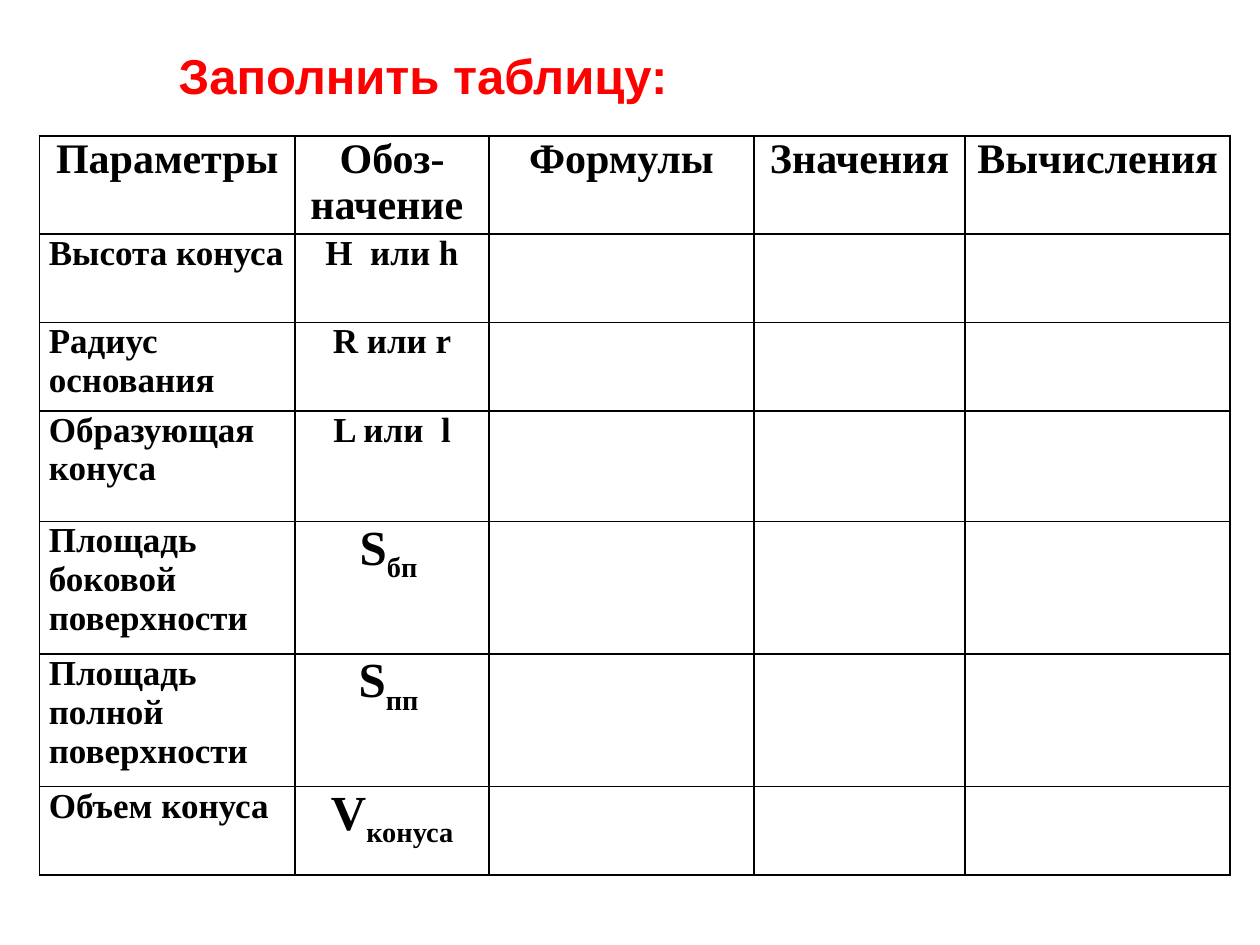
from lxml.etree import SubElement
from pptx import Presentation
from pptx.dml.color import RGBColor
from pptx.enum.text import MSO_AUTO_SIZE, PP_ALIGN as Align
from pptx.oxml.ns import qn
from pptx.util import Pt

BLACK = RGBColor(0, 0, 0)
RED = RGBColor(255, 0, 0)

HEADERS = ["Параметры", "Обоз-начение ", "Формулы", "Значения", "Вычисления"]
PARAMETERS = [
    ("Высота конуса", "H  или h", ""),
    ("Радиус основания", "R или r", ""),
    ("Образующая конуса", "L или  l", ""),
    ("Площадь боковой поверхности ", "S", "бп "),
    ("Площадь полной поверхности ", "S", "пп "),
    ("Объем конуса", "V", "конуса"),
]
COL_WIDTHS = [146.2, 110.7, 151.4, 120.8, 151.4]
ROW_HEIGHTS = [56.2, 50.5, 50.5, 63.2, 75.8, 75.8, 50.5]


def add_text(p, text, size=20, font="Times New Roman", color=BLACK,
             align=Align.CENTER, baseline=0):
    p.alignment = align
    r = p.add_run()
    r.text = text
    r.font.size = Pt(size)
    r.font.name = font
    r.font.bold = True
    r.font.color.rgb = color
    if baseline:
        r.font._element.set("baseline", str(baseline * 1000))


def format_cell(cell):
    cell.margin_left = cell.margin_right = Pt(5.4)
    cell.margin_top = cell.margin_bottom = 0
    tc_pr = cell._tc.get_or_add_tcPr()
    for side in ("lnL", "lnR", "lnT", "lnB"):
        line = SubElement(tc_pr, qn(f"a:{side}"), w=str(Pt(1)))
        fill = SubElement(line, qn("a:solidFill"))
        SubElement(fill, qn("a:srgbClr"), val=str(BLACK))
    cell.fill.background()


def add_title(s, left, top, width, height):
    tf = s.shapes.add_textbox(Pt(left), Pt(top), Pt(width), Pt(height)).text_frame
    tf.word_wrap = True
    tf.auto_size = MSO_AUTO_SIZE.SHAPE_TO_FIT_TEXT
    add_text(tf.paragraphs[0], "Заполнить таблицу:", size=28, font="Arial", color=RED)


def add_parameter_table(s, left, top, col_widths, row_heights):
    table = s.shapes.add_table(
        len(row_heights), len(col_widths), Pt(left), Pt(top),
        Pt(sum(col_widths)), Pt(sum(row_heights))).table
    table.first_row = table.horz_banding = False
    for col, width in zip(table.columns, col_widths):
        col.width = Pt(width)
    for row, height in zip(table.rows, row_heights):
        row.height = Pt(height)
    for cell in table.iter_cells():
        format_cell(cell)

    for i, header in enumerate(HEADERS):
        add_text(table.cell(0, i).text_frame.paragraphs[0], header, size=24)
    for i, (name, symbol, subscript) in enumerate(PARAMETERS, 1):
        add_text(table.cell(i, 0).text_frame.paragraphs[0], name, align=Align.JUSTIFY)
        p = table.cell(i, 1).text_frame.paragraphs[0]
        add_text(p, symbol, size=28 if subscript else 20)
        if subscript:
            add_text(p, subscript, size=28, baseline=-25)


def main():
    prs = Presentation()
    prs.slide_width, prs.slide_height = Pt(720), Pt(540)
    s = prs.slides.add_slide(prs.slide_layouts[6])
    add_parameter_table(s, 22.5, 77.6, COL_WIDTHS, ROW_HEIGHTS)
    add_title(s, 56, 22.5, 371.5, 41)
    prs.save("out.pptx")


if __name__ == "__main__":
    main()
